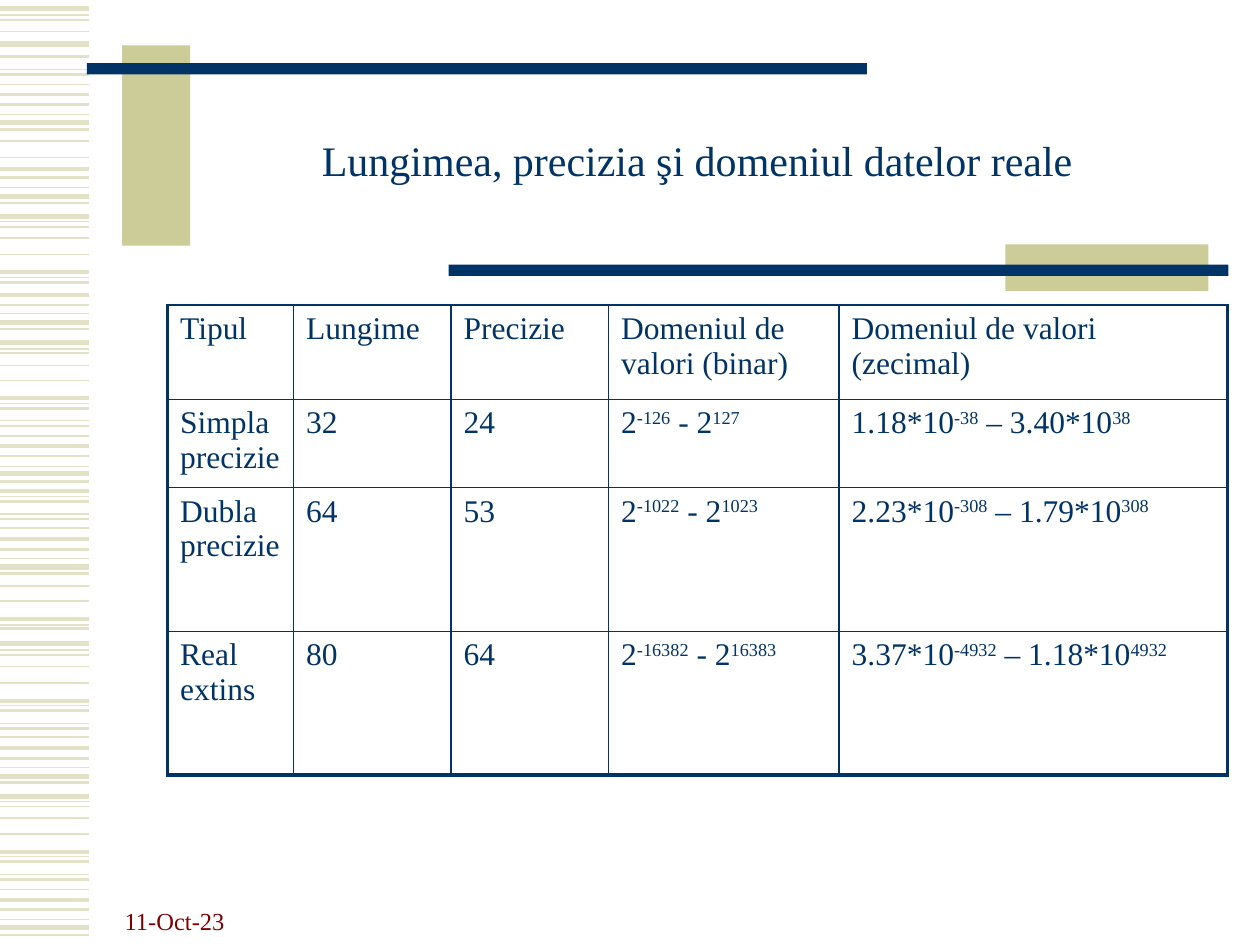
from dataclasses import dataclass

from lxml import etree
from pptx import Presentation
from pptx import util as u
from pptx.dml.color import RGBColor
from pptx.enum import shapes, text
from pptx.oxml.ns import qn


@dataclass(frozen=True)
class Theme:
    font: str = "Times New Roman"
    navy: str = "003366"
    sand: str = "CCCC99"
    pale: str = "E3E2C7"
    red: str = "800000"
    title: float = 24
    body: float = 18
    small: float = 14
    thin: float = 1
    thick: float = 2.25


class Deck:
    """Holds the theme and the current slide."""

    def __init__(self, theme):
        self.theme = theme
        self.prs = Presentation()
        self.prs.slide_width, self.prs.slide_height = u.Inches(10), u.Inches(7.5)
        self.slide = self.prs.slides.add_slide(self.prs.slide_layouts[6])

    def line(self, x1, y1, x2, y2, color, width):
        ends = [u.Inches(v) for v in (x1, y1, x2, y2)]
        line = self.slide.shapes.add_connector(shapes.MSO_CONNECTOR.STRAIGHT, *ends)
        line.line.color.rgb = RGBColor.from_string(color)
        line.line.width = u.Pt(width)
        etree.SubElement(line._element.spPr, qn("a:effectLst"))

    def rect(self, box, color):
        rect = self.slide.shapes.add_shape(
            shapes.MSO_SHAPE.RECTANGLE, *[u.Inches(v) for v in box])
        rect.shadow.inherit = False
        rect.fill.solid()
        rect.fill.fore_color.rgb = RGBColor.from_string(color)
        rect.line.fill.background()

    def run(self, para, words, size, color, raised=False):
        run = para.add_run()
        run.text = words
        run.font.name = self.theme.font
        run.font.size = u.Pt(size)
        run.font.color.rgb = RGBColor.from_string(color)
        if raised:
            run._r.get_or_add_rPr().set("baseline", "30000")

    def label(self, box, words, size, color, anchor, align, spacing=1.0):
        label = self.slide.shapes.add_textbox(*[u.Inches(v) for v in box])
        frame = label.text_frame
        frame.word_wrap = True
        frame.vertical_anchor = anchor
        para = frame.paragraphs[0]
        para.alignment = align
        para.line_spacing = spacing
        self.run(para, words, size, color)

    def border(self, cell, widths):
        props = cell._tc.get_or_add_tcPr()
        for i, (side, width) in enumerate(widths.items()):
            edge = etree.Element(qn(f"a:ln{side}"), w=str(u.Pt(width)))
            fill = etree.SubElement(edge, qn("a:solidFill"))
            etree.SubElement(fill, qn("a:srgbClr"), val=self.theme.navy)
            props.insert(i, edge)

    def table(self, left, top, cols, rows, cells):
        """Each cell is a list of parts; every second part is raised."""
        look = self.theme
        frame = self.slide.shapes.add_table(
            len(rows), len(cols), u.Inches(left), u.Inches(top),
            u.Inches(sum(cols)), u.Inches(sum(rows)))
        table = frame.table
        table.first_row = table.horz_banding = False
        for col, width in zip(table.columns, cols):
            col.width = u.Inches(width)
        for row, height in zip(table.rows, rows):
            row.height = u.Inches(height)
        for r, line in enumerate(cells):
            for c, parts in enumerate(line):
                cell = table.cell(r, c)
                cell.fill.background()
                heavy = {"L": c == 0, "R": c == len(cols) - 1,
                         "T": False, "B": r == len(rows) - 1}
                self.border(cell, {side: look.thick if on else look.thin
                                   for side, on in heavy.items()})
                para = cell.text_frame.paragraphs[0]
                for i, part in enumerate(parts):
                    self.run(para, part, look.body, look.navy, i % 2 == 1)

    def save(self):
        self.prs.save("out.pptx")


# Heights of the side stripes, by line width
STRIPES = {
    3: (0.07, 0.35, 0.97, 1.56, 1.72, 2.56, 2.72, 3.76, 4.5, 5.11, 6.16, 6.32,
        7.36),
    2.25: (0.75, 1.34, 2.16, 2.34, 3.16, 3.54, 3.9, 4.28, 4.91, 5.56, 5.94,
           6.76, 7.14),
    1.5: (0.45, 0.59, 0.83, 1.03, 1.41, 1.61, 2.24, 2.42, 2.61, 3.24, 3.38,
          3.62, 3.82, 3.98, 4.12, 4.36, 4.55, 4.99, 5.64, 5.78, 6.02, 6.21,
          6.84, 6.98, 7.22, 7.42),
    1: (0.16, 0.25, 0.67, 1.12, 1.25, 1.8, 1.89, 2.02, 2.8, 2.9, 3.02, 3.46,
        4.19, 4.65, 4.77, 5.2, 5.29, 5.42, 5.85, 6.4, 6.49, 6.62, 7.06),
    0.75: (0.12, 0.55, 0.91, 1.49, 1.76, 2.2, 2.49, 2.77, 3.2, 3.34, 3.7, 3.94,
           4.08, 4.43, 4.96, 5.16, 5.6, 5.74, 6.09, 6.36, 6.8, 6.94, 7.3),
}

HEAD = ("Tipul", "Lungime", "Precizie", "Domeniul de valori (binar)",
        "Domeniul de valori (zecimal)")

# Type, length, precision, binary exponents, decimal range
TYPES = (
    ("Simpla precizie", "32", "24", ("-126", "127"),
     ("1.18", "-38", "3.40", "38")),
    ("Dubla precizie", "64", "53", ("-1022", "1023"),
     ("2.23", "-308", "1.79", "308")),
    ("Real extins", "80", "64", ("-16382", "16383"),
     ("3.37", "-4932", "1.18", "4932")),
)


def main():
    look = Theme()
    deck = Deck(look)

    # Side stripes
    for width, heights in STRIPES.items():
        for y in heights:
            deck.line(0, y, 0.71, y, look.pale, width)

    # Blocks and bars around the title
    deck.rect((0.97, 0.36, 0.54, 1.59), look.sand)
    deck.rect((0.69, 0.5, 6.19, 0.09), look.navy)
    deck.rect((7.98, 1.94, 1.61, 0.37), look.sand)
    deck.rect((3.56, 2.1, 6.19, 0.09), look.navy)

    # Date and title
    deck.label((0.89, 6.97, 2.08, 0.5), "11-Oct-23", look.small, look.red,
               text.MSO_ANCHOR.BOTTOM, text.PP_ALIGN.LEFT)
    deck.label((1.5, 0.67, 8.07, 1.25),
               "Lungimea, precizia şi domeniul datelor reale", look.title,
               look.navy, text.MSO_ANCHOR.MIDDLE, text.PP_ALIGN.CENTER, 0.85)

    # Table of real types
    cells = [[[word] for word in HEAD]]
    for name, size, digits, (low, high), (a, m, b, n) in TYPES:
        cells.append([[name], [size], [digits], ["2", low, " - 2", high],
                      [f"{a}*10", m, f" – {b}*10", n]])
    deck.table(1.33, 2.42, (1, 1.25, 1.25, 1.83, 3.08),
               (0.75, 0.57, 1.14, 1.14), cells)

    deck.save()


if __name__ == "__main__":
    main()
